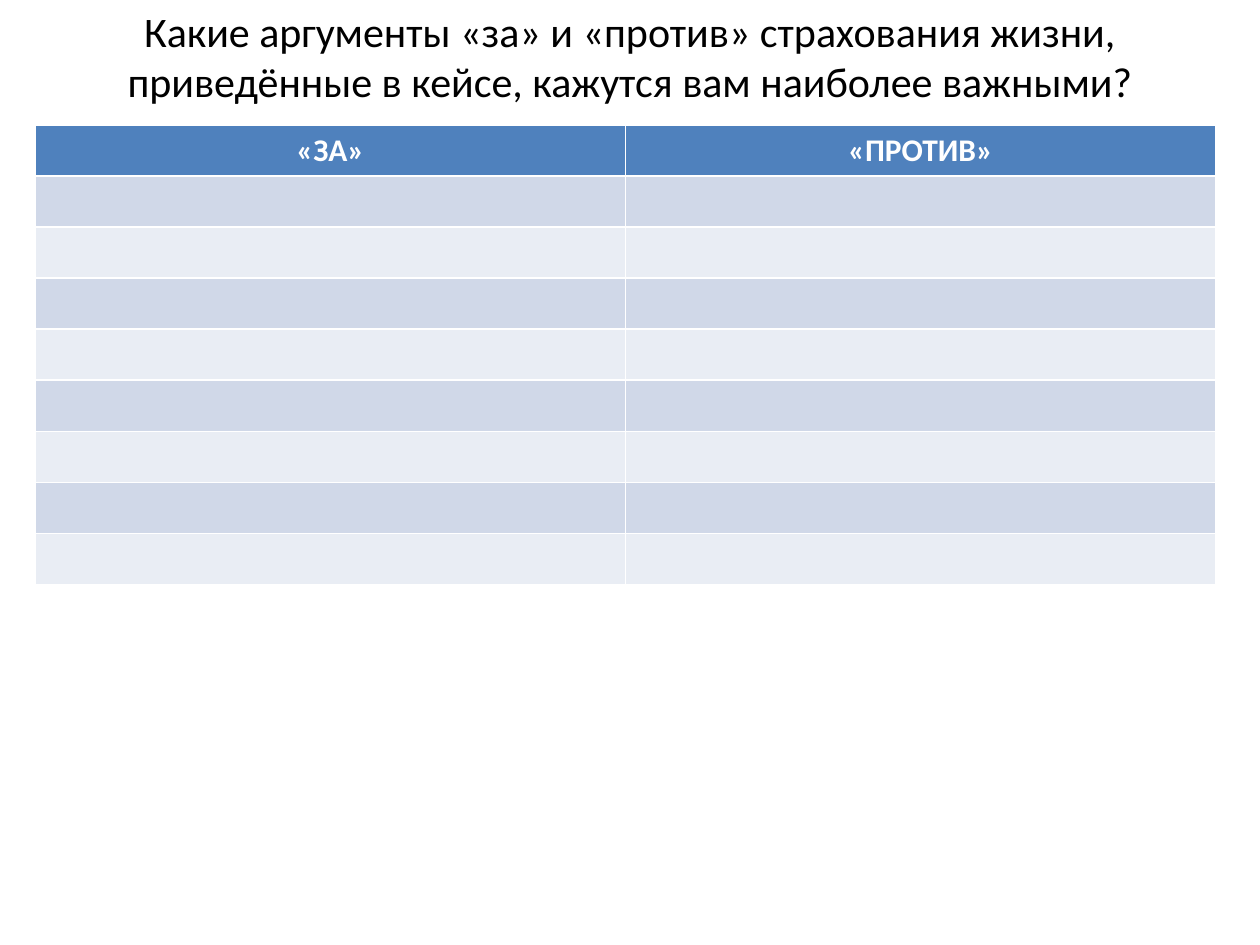
"""Build a slide with a table for arguments for and against life insurance."""
import pptx
import pptx.dml.color
import pptx.enum.text
import pptx.util

Inches = pptx.util.Inches
BLACK = pptx.dml.color.RGBColor(0x00, 0x00, 0x00)
WHITE = pptx.dml.color.RGBColor(0xFF, 0xFF, 0xFF)
HEADER_BLUE = pptx.dml.color.RGBColor(0x4F, 0x81, 0xBD)
BAND_DARK = pptx.dml.color.RGBColor(0xD0, 0xD8, 0xE8)
BAND_LIGHT = pptx.dml.color.RGBColor(0xE9, 0xED, 0xF4)
TITLE_FONT = {"name": "Calibri", "size": pptx.util.Pt(24), "bold": False}
HEADING_FONT = {"name": "Calibri", "size": pptx.util.Pt(18), "bold": True}
HEADINGS = ["«ЗА»", "«ПРОТИВ»"]
ARGUMENT_ROWS = 8


def write_centred(frame, text, font_format, color):
    frame.text = text
    paragraph = frame.paragraphs[0]
    paragraph.alignment = pptx.enum.text.PP_ALIGN.CENTER
    font = paragraph.runs[0].font
    for attribute, value in font_format.items():
        setattr(font, attribute, value)
    font.color.rgb = color


presentation = pptx.Presentation()
presentation.slide_width = Inches(10)
presentation.slide_height = Inches(7.5)
slide = presentation.slides.add_slide(presentation.slide_layouts[5])

question = slide.shapes.title
question_place = {"left": 0.5, "top": 0.21, "width": 9, "height": 0.46}
for attribute, value in question_place.items():
    setattr(question, attribute, Inches(value))
question_frame = {
    "word_wrap": True,
    "auto_size": pptx.enum.text.MSO_AUTO_SIZE.NONE,
    "vertical_anchor": pptx.enum.text.MSO_ANCHOR.MIDDLE,
}
for attribute, value in question_frame.items():
    setattr(question.text_frame, attribute, value)
write_centred(
    question.text_frame,
    "Какие аргументы «за» и «против» страхования жизни, "
    "приведённые в кейсе, кажутся вам наиболее важными?",
    TITLE_FONT,
    BLACK,
)

arguments = slide.shapes.add_table(
    ARGUMENT_ROWS + 1, len(HEADINGS),
    Inches(0.28), Inches(0.99), Inches(9.37), Inches(3.65),
).table
for row_number, row in enumerate(arguments.rows):
    band = BAND_DARK if row_number % 2 else BAND_LIGHT
    for cell in row.cells:
        cell.fill.solid()
        cell.fill.fore_color.rgb = band if row_number else HEADER_BLUE
for column, heading in enumerate(HEADINGS):
    write_centred(arguments.cell(0, column).text_frame, heading, HEADING_FONT, WHITE)

presentation.save("out.pptx")
